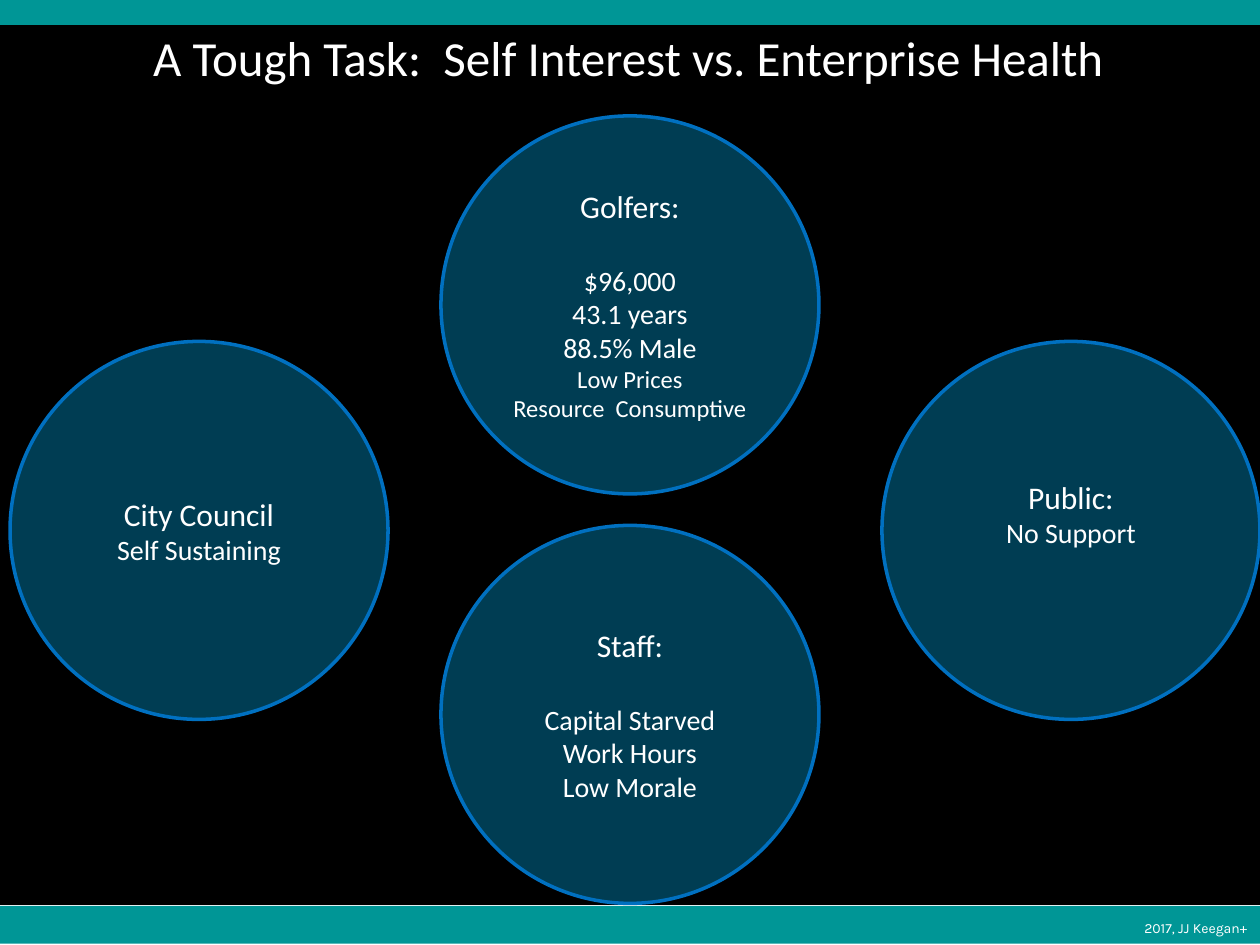
from dataclasses import dataclass

from lxml.etree import SubElement
from pptx import Presentation
from pptx.dml.color import RGBColor as Rgb
from pptx.enum.shapes import MSO_SHAPE as Kind
from pptx.enum.text import MSO_ANCHOR as Anchor, MSO_AUTO_SIZE as Fit, PP_ALIGN as Align
from pptx.oxml.ns import qn
from pptx.util import Inches, Pt

COLORS = {"teal": "009696", "black": "000000", "white": "FFFFFF",
          "sky": "00B0F0", "blue": "0070C0"}
SIZE = 3  # circle diameter


@dataclass
class Group:
    left: float
    top: float
    lines: list[tuple[str, int]]
    gap: float = 0  # points between heading and details
    foot: float = 0.05  # bottom inset


GROUPS = [
    Group(0.08, 2.71, [("City Council", 18), ("Self Sustaining", 16)]),
    Group(3.5, 0.92, [("Golfers:", 18), ("$96,000", 16), ("43.1 years", 16),
                      ("88.5% Male", 16), ("Low Prices", 14),
                      ("Resource  Consumptive", 14)], gap=22),
    Group(7, 2.71, [("Public:", 18), ("No Support", 16)], foot=0.32),
    Group(3.5, 4.17, [("Staff:", 18), ("Capital Starved", 16),
                      ("Work Hours", 16), ("Low Morale", 16)], gap=22),
]


def color(name: str) -> Rgb:
    return Rgb.from_string(COLORS[name])


def style(para, size: float, face: str = "Calibri", align=Align.CENTER) -> None:
    para.alignment = align
    for run in para.runs:
        run.font.size = Pt(size)
        run.font.name = face
        run.font.color.rgb = color("white")


def draw(slide, kind, box: tuple, fill: str, line: str | None = None):
    shape = slide.shapes.add_shape(kind, *map(Inches, box))
    shape.shadow.inherit = False
    shape.fill.solid()
    shape.fill.fore_color.rgb = color(fill)
    if line:
        shape.line.color.rgb = color(line)
        shape.line.width = Pt(2)
    else:
        shape.line.fill.background()
    return shape


def circle(slide, group: Group) -> None:
    shape = draw(slide, Kind.OVAL, (group.left, group.top, SIZE, SIZE), "sky", "blue")
    tint = shape.element.spPr.find(qn("a:solidFill"))[0]
    SubElement(tint, qn("a:alpha"), val="35000")
    frame = shape.text_frame
    frame.word_wrap = True
    frame.vertical_anchor = Anchor.MIDDLE
    frame.margin_bottom = Inches(group.foot)
    frame.text = "\n".join(text for text, _ in group.lines)
    for para, (_, size) in zip(frame.paragraphs, group.lines):
        style(para, size)
    if group.gap:
        frame.paragraphs[1].space_before = Pt(group.gap)


def main() -> None:
    deck = Presentation()
    deck.slide_width, deck.slide_height = Inches(10), Inches(7.5)
    slide = deck.slides.add_slide(deck.slide_layouts[5])

    # Bars and footer
    for top in (0, 7.19):
        draw(slide, Kind.RECTANGLE, (0, top, 10, 0.3), "teal")
    foot = slide.shapes.add_textbox(*map(Inches, (6.67, 7.25, 3.33, 0.24))).text_frame
    foot.word_wrap = True
    foot.text = "2017, JJ Keegan+"
    style(foot.paragraphs[0], 8, "Karla", Align.RIGHT)

    # Backdrop and circles
    draw(slide, Kind.RECTANGLE, (0, 0.21, 10, 6.96), "black", "black")
    for group in GROUPS:
        circle(slide, group)

    # Title, brought in front of the backdrop
    title = slide.shapes.title
    title.left, title.top, title.width, title.height = map(Inches, (0, 0.17, 9.97, 0.57))
    frame = title.text_frame
    frame.text = "A Tough Task:  Self Interest vs. Enterprise Health"
    frame.auto_size = Fit.NONE
    frame.vertical_anchor = Anchor.TOP
    style(frame.paragraphs[0], 28)
    title.element.getparent().append(title.element)

    deck.save("out.pptx")


if __name__ == "__main__":
    main()
